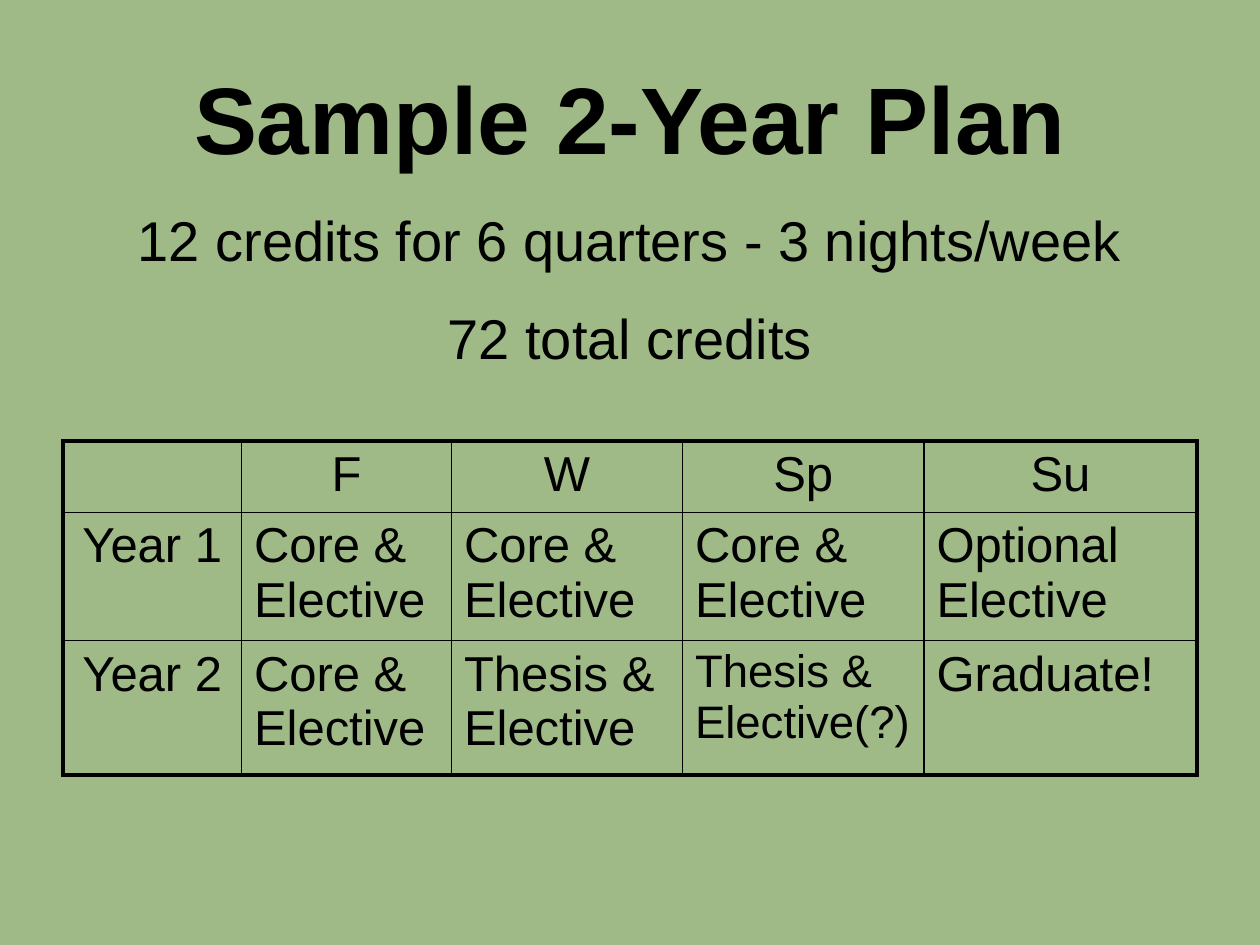
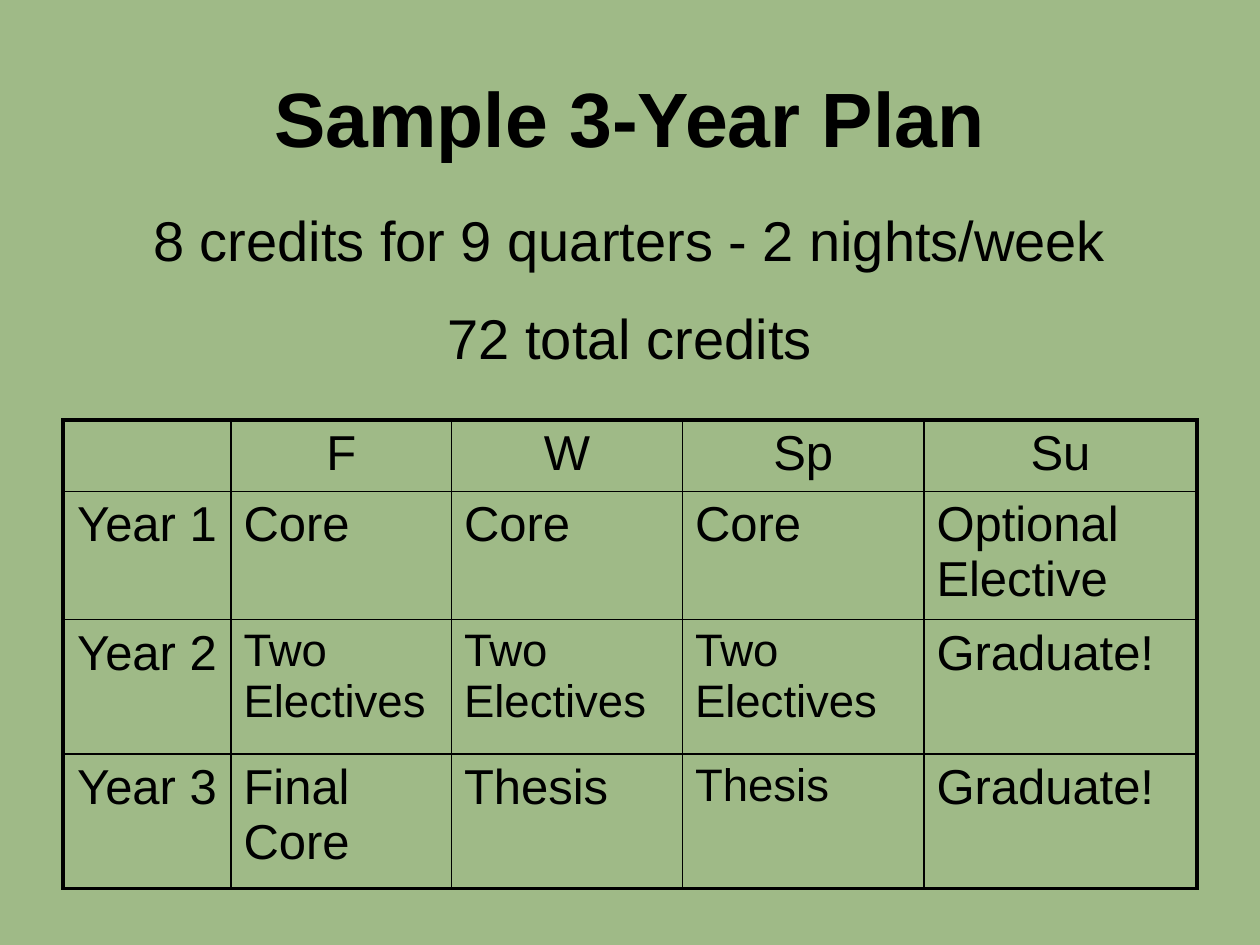
"""Build two slides that show sample study plans as tables."""
from lxml.etree import SubElement
from pptx import Presentation
from pptx.dml.color import RGBColor
from pptx.enum.text import MSO_ANCHOR as Anchor, MSO_AUTO_SIZE as AutoSize, PP_ALIGN as Align
from pptx.oxml.ns import qn
from pptx.util import Pt

PX = 7620
SAGE = RGBColor(0x9F, 0xBA, 0x87)
BLACK = RGBColor(0x00, 0x00, 0x00)
FONT = "Arial"
TERMS = ["", "F", "W", "Sp", "Su"]
THIN, THICK = 1, 2.25


def write(frame, *lines, size, bold=False, align=Align.LEFT, gap=0):
    """Fill a text frame with one formatted paragraph per line."""
    for index, line in enumerate(lines):
        para = frame.add_paragraph() if index else frame.paragraphs[0]
        para.alignment = align
        para.space_before = Pt(gap if index else 0)
        span = para.add_run()
        span.text = line
        span.font.name, span.font.size, span.font.bold = FONT, Pt(size), bold
        span.font.color.rgb = BLACK


def draw_border(cell, side, width):
    """Add a solid black line on one side of a table cell."""
    line = SubElement(cell._tc.get_or_add_tcPr(), qn(f"a:ln{side}"), w=str(Pt(width)))
    fill = SubElement(line, qn("a:solidFill"))
    SubElement(fill, qn("a:srgbClr"), val=str(BLACK))


class PlanDeck:
    """Hold the shared style and the current slide."""

    def __init__(self):
        self.deck = Presentation()
        self.deck.slide_width, self.deck.slide_height = 1200 * PX, 900 * PX
        background = self.deck.slide_master.background.fill
        background.solid()
        background.fore_color.rgb = SAGE
        self.page = None

    def add_page(self, title, size):
        """Start a slide and format its title."""
        self.page = self.deck.slides.add_slide(self.deck.slide_layouts[5])
        box = self.page.shapes.title
        box.left, box.top, box.width, box.height = 60 * PX, 36 * PX, 1080 * PX, 150 * PX
        frame = box.text_frame
        frame.auto_size, frame.vertical_anchor = AutoSize.NONE, Anchor.MIDDLE
        write(frame, title, size=size, bold=True, align=Align.CENTER)

    def add_summary(self, left, width, *lines):
        """Add the centred lines below the title."""
        box = self.page.shapes.add_textbox(left * PX, 190 * PX, width * PX, 174 * PX)
        frame = box.text_frame
        frame.word_wrap, frame.auto_size = True, AutoSize.SHAPE_TO_FIT_TEXT
        write(frame, *lines, size=32, align=Align.CENTER, gap=17.5)

    def add_plan(self, top, widths, heights, years, small):
        """Add the plan table, with terms across and years down."""
        rows = [TERMS] + [[f"Year {number}", *year] for number, year in enumerate(years, 1)]
        table = self.page.shapes.add_table(
            len(rows), len(TERMS), 60 * PX, top * PX, sum(widths) * PX, sum(heights) * PX
        ).table
        table.first_row = table.horz_banding = False
        for column, width in zip(table.columns, widths):
            column.width = width * PX
        for row, height in zip(table.rows, heights):
            row.height = height * PX
        last_row, last_column = len(rows) - 1, len(TERMS) - 1
        for r, texts in enumerate(rows):
            for c, text in enumerate(texts):
                cell = table.cell(r, c)
                outer = {"L": c == 0, "R": c == last_column, "T": r == 0, "B": r == last_row}
                for side, is_outer in outer.items():
                    draw_border(cell, side, THICK if is_outer else THIN)
                cell.fill.background()
                if text:
                    align = Align.CENTER if r == 0 or c == 0 else Align.LEFT
                    write(cell.text_frame, text, size=26 if (r, c) in small else 28, align=align)


def main():
    """Build both plans and save the deck."""
    plans = PlanDeck()

    plans.add_page("Sample 2-Year Plan", 54)
    plans.add_plan(
        420, [170, 200, 220, 230, 260], [68, 122, 128],
        [["Core & Elective"] * 3 + ["Optional Elective"],
         ["Core & Elective", "Thesis & Elective", "Thesis & Elective(?)", "Graduate!"]],
        small={(2, 3)},
    )
    plans.add_summary(90, 1020, "12 credits for 6 quarters - 3 nights/week", "72 total credits")

    plans.add_page("Sample 3-Year Plan", 44)
    plans.add_plan(
        400, [160, 210, 220, 230, 260], [68, 122, 128, 128],
        [["Core"] * 3 + ["Optional Elective"],
         ["Two Electives"] * 3 + ["Graduate!"],
         ["Final Core", "Thesis", "Thesis", "Graduate!"]],
        small={(2, 1), (2, 2), (2, 3), (3, 3)},
    )
    plans.add_summary(60, 1080, "8 credits for 9 quarters - 2 nights/week", "72 total credits")

    plans.deck.save("out.pptx")


if __name__ == "__main__":
    main()
